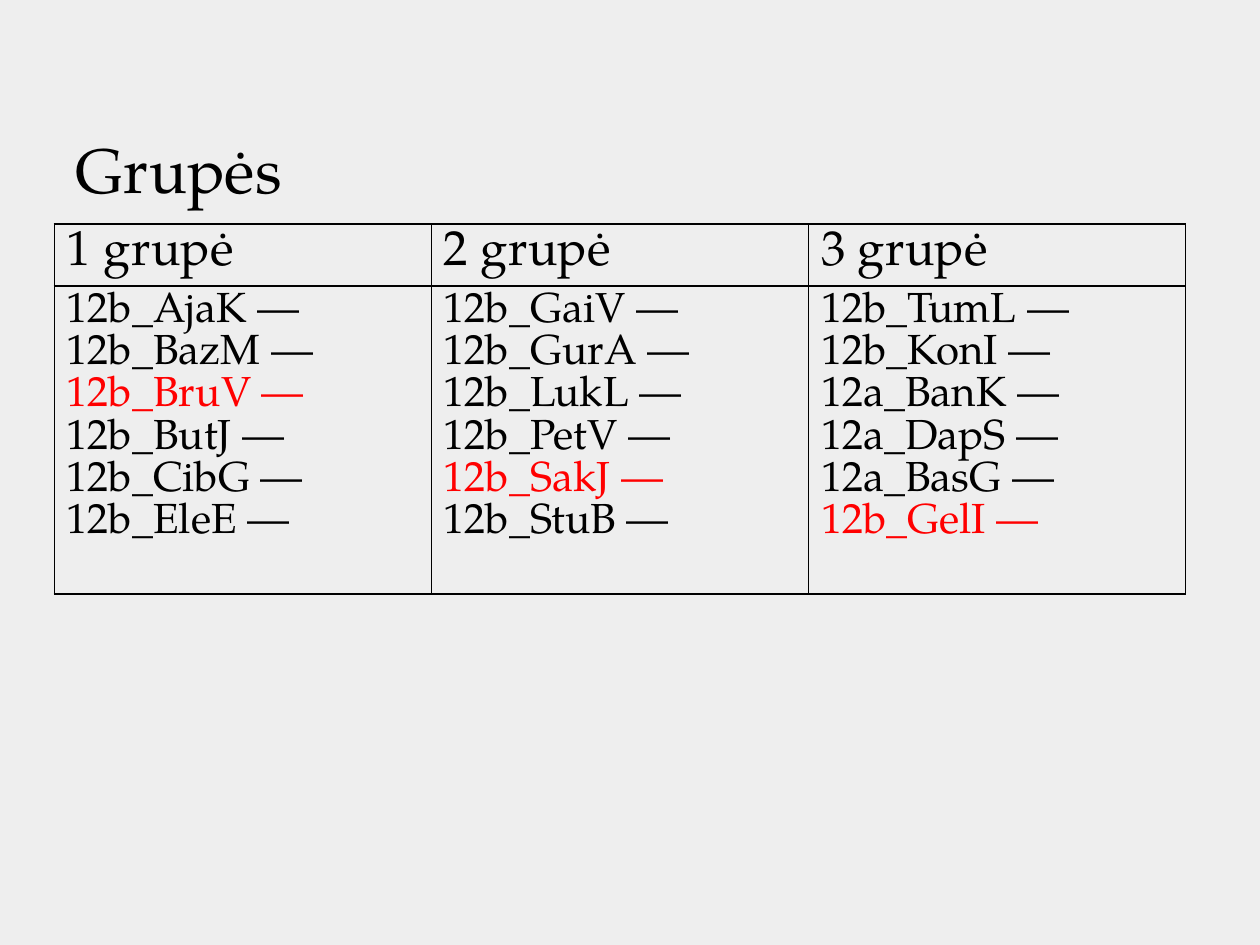
from dataclasses import dataclass
from lxml import etree
from pptx import Presentation
from pptx.dml.color import RGBColor as Rgb
from pptx.enum.text import MSO_ANCHOR as Anchor, MSO_AUTO_SIZE as Fit, PP_ALIGN as Align
from pptx.oxml import parse_xml
from pptx.oxml.ns import nsdecls
from pptx.util import Pt


@dataclass(frozen=True)
class Theme:
    font: str = "TeX Gyre Pagella"
    back: str = "EEEEEE"
    ink: str = "000000"
    mark: str = "FF0000"
    title: int = 36
    head: int = 28
    body: int = 24


GROUPS = {
    "1 grupė": "12b_AjaK 12b_BazM 12b_BruV 12b_ButJ 12b_CibG 12b_EleE",
    "2 grupė": "12b_GaiV 12b_GurA 12b_LukL 12b_PetV 12b_SakJ 12b_StuB",
    "3 grupė": "12b_TumL 12b_KonI 12a_BanK 12a_DapS 12a_BasG 12b_GelI",
}
MARKED = {"12b_BruV", "12b_SakJ", "12b_GelI"}


class Deck:
    """Holds the theme and the current slide, and draws each kind of element."""

    def __init__(self, theme):
        self.theme = theme
        self.show = Presentation()
        self.show.slide_width, self.show.slide_height = Pt(720), Pt(540)
        self.slide = self.show.slides.add_slide(self.show.slide_layouts[5])
        fill = self.slide.background.fill
        fill.solid()
        fill.fore_color.rgb = Rgb.from_string(theme.back)

    def apply(self, item, **form):
        for name, value in form.items():
            setattr(item, name, value)

    def label(self, para, text, size, color):
        run = para.add_run()
        run.text = text
        self.apply(run.font, name=self.theme.font, size=Pt(size))
        run.font.color.rgb = Rgb.from_string(color)

    def title(self, text, left, top, width, height):
        shape = self.slide.shapes.title
        self.apply(shape, left=Pt(left), top=Pt(top), width=Pt(width), height=Pt(height))
        frame = shape.text_frame
        self.apply(frame, auto_size=Fit.NONE, vertical_anchor=Anchor.BOTTOM, margin_bottom=Pt(0))
        para = frame.paragraphs[0]
        para.alignment = Align.LEFT
        self.label(para, text, self.theme.title, self.theme.ink)

    def border(self, cell):
        props = cell._tc.get_or_add_tcPr()
        for at, side in enumerate(("lnL", "lnR", "lnT", "lnB")):
            line = parse_xml(f'<a:{side} {nsdecls("a")} w="{Pt(1)}"/>')
            fill = etree.SubElement(line, line.tag.replace(side, "solidFill"))
            etree.SubElement(fill, line.tag.replace(side, "srgbClr"), val=self.theme.ink)
            props.insert(at, line)

    def cell(self, cell, lines, size):
        cell.fill.background()
        self.border(cell)
        frame = cell.text_frame
        for at, text in enumerate(lines):
            para = frame.add_paragraph() if at else frame.paragraphs[0]
            para.line_spacing = Pt(size + 0.1)
            color = self.theme.mark if text.split()[0] in MARKED else self.theme.ink
            self.label(para, text, size, color)

    def table(self, groups, left, top, width, heights):
        grid = self.slide.shapes.add_table(
            2, len(groups), Pt(left), Pt(top), Pt(width), Pt(sum(heights))).table
        self.apply(grid, first_row=False, horz_banding=False)
        for row, height in zip(grid.rows, heights):
            row.height = Pt(height)
        for at, (head, names) in enumerate(groups.items()):
            grid.columns[at].width = Pt(width / len(groups))
            self.cell(grid.cell(0, at), [head], self.theme.head)
            self.cell(grid.cell(1, at), [f"{name} —" for name in names.split()], self.theme.body)


def main():
    deck = Deck(Theme())
    deck.title("Grupės", 36, 28, 648, 90)
    deck.table(GROUPS, 31, 128, 646.5, (35.4, 176))
    deck.show.save("out.pptx")


if __name__ == "__main__":
    main()
